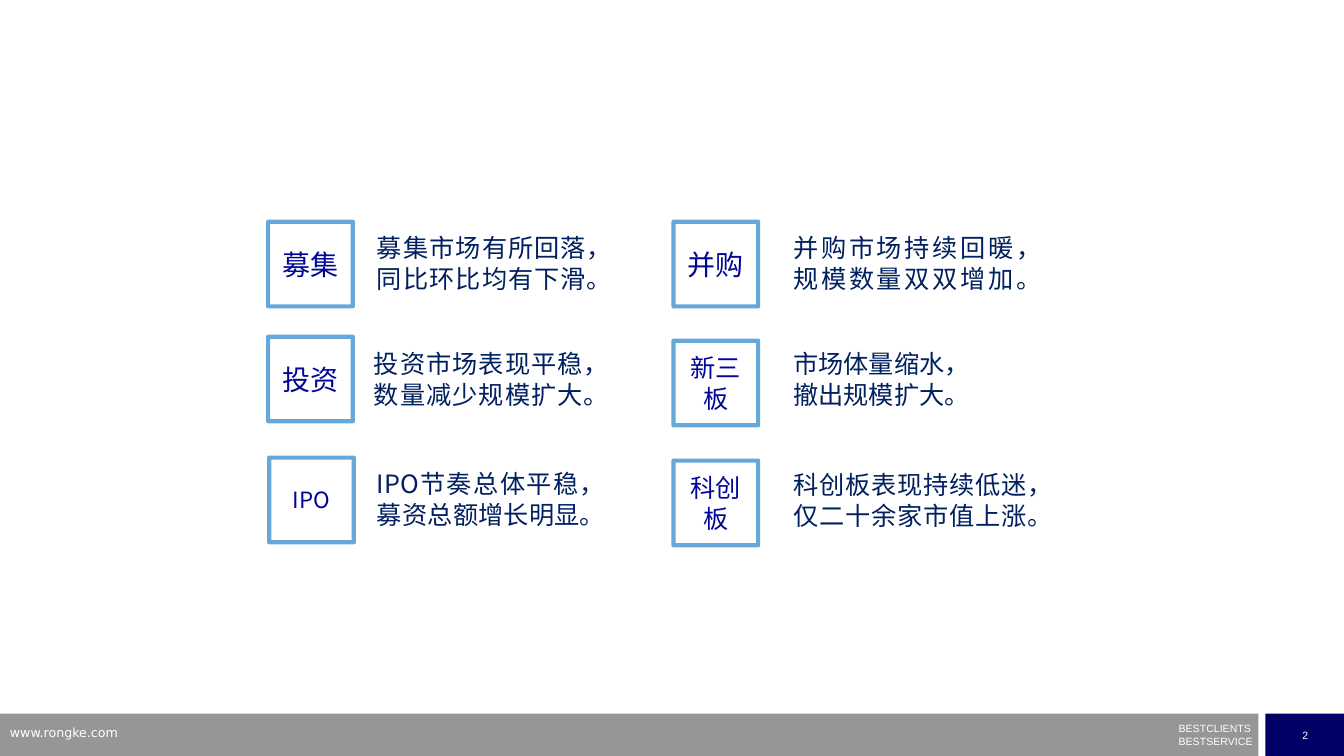
from lxml import etree
from pptx import Presentation
from pptx.dml.color import RGBColor
from pptx.enum.shapes import MSO_SHAPE as SHAPE
from pptx.enum.text import MSO_ANCHOR as ANCHOR, MSO_AUTO_SIZE as AUTO, PP_ALIGN as ALIGN
from pptx.oxml.ns import qn
from pptx.util import Inches, Pt

WHITE = RGBColor(0xFF, 0xFF, 0xFF)
GREY = RGBColor(0x96, 0x96, 0x96)
DARK_BLUE = RGBColor(0x00, 0x00, 0x66)
LABEL_BLUE = RGBColor(0x00, 0x07, 0x98)
TEXT_BLUE = RGBColor(0x00, 0x20, 0x60)
FRAME_BLUE = RGBColor(0x00, 0x70, 0xC0)
CJK = "Noto Sans CJK SC"
LABEL_SIDE = 0.84
NOTE_HEIGHT = 0.71

# label, label size, label left and top, note left, top and width, note paragraphs
TOPICS = [
    ("募集", 20, 2.66, 2.2, 3.64, 2.26, 2.28, ["募集市场有所回落，同比环比均有下滑。"]),
    ("投资", 20, 2.66, 3.34, 3.61, 3.41, 2.28, ["投资市场表现平稳，数量减少规模扩大。"]),
    ("IPO", 16, 2.67, 4.54, 3.64, 4.6, 2.21, ["IPO节奏总体平稳，", "募资总额增长明显。"]),
    ("并购", 20, 6.68, 2.2, 7.77, 2.26, 2.41, ["并购市场持续回暖，", "规模数量双双增加。"]),
    ("新三板", 18, 6.68, 3.38, 7.77, 3.41, 2.53, ["市场体量缩水，", "撤出规模扩大。"]),
    ("科创板", 18, 6.68, 4.57, 7.77, 4.61, 2.52, ["科创板表现持续低迷，", "仅二十余家市值上涨。"]),
]


def write(tf, lines, size, color, font, align=ALIGN.LEFT):
    """Fill a text frame with one paragraph per line."""
    for i, line in enumerate(lines):
        p = tf.add_paragraph() if i else tf.paragraphs[0]
        p.alignment = align
        r = p.add_run()
        r.text = line
        r.font.size = Pt(size)
        r.font.name = font
        r.font.color.rgb = color
        ea = etree.SubElement(r.font._element, qn("a:ea"))
        ea.set("typeface", font)


def add_rect(s, left, top, width, height, fill=None):
    sp = s.shapes.add_shape(SHAPE.RECTANGLE, Inches(left), Inches(top),
                            Inches(width), Inches(height))
    sp.shadow.inherit = False
    if fill is None:
        sp.fill.background()
    else:
        sp.fill.solid()
        sp.fill.fore_color.rgb = fill
        sp.line.fill.background()
    return sp


def add_text(s, left, top, width, height):
    sp = s.shapes.add_textbox(Inches(left), Inches(top), Inches(width), Inches(height))
    tf = sp.text_frame
    tf.word_wrap = True
    tf.auto_size = AUTO.SHAPE_TO_FIT_TEXT
    return tf


def add_label(s, left, top, text, size):
    sp = add_rect(s, left, top, LABEL_SIDE, LABEL_SIDE)
    sp.line.width = Pt(3)
    sp.line.color.rgb = FRAME_BLUE
    color = sp.line._ln.find(qn("a:solidFill")).find(qn("a:srgbClr"))
    etree.SubElement(color, qn("a:alpha")).set("val", "60000")
    sp.text_frame.vertical_anchor = ANCHOR.MIDDLE
    write(sp.text_frame, [text], size, LABEL_BLUE, CJK, ALIGN.CENTER)


def add_footer(s):
    add_rect(s, 0, 7.08, 12.48, 0.42, GREY)
    number = add_rect(s, 12.55, 7.08, 0.79, 0.42, DARK_BLUE).text_frame
    number.word_wrap = False
    number.vertical_anchor = ANCHOR.MIDDLE
    write(number, ["2"], 7.5, WHITE, "Arial", ALIGN.CENTER)

    motto = add_text(s, 11.69, 7.22, 0.76, 0.2)
    motto.margin_left = motto.margin_right = motto.margin_top = motto.margin_bottom = 0
    write(motto, ["BESTCLIENTS", "BESTSERVICE"], 7.5, WHITE, "Arial")
    for p in motto.paragraphs:
        p.line_spacing = 0.5
    motto.paragraphs[1].space_before = Pt(4.3)

    write(add_text(s, 0, 7.14, 3.2, 0.26), ["www.rongke.com"], 9, WHITE, "DejaVu Sans")


def main():
    prs = Presentation()
    prs.slide_width = Inches(13.33)
    prs.slide_height = Inches(7.5)
    s = prs.slides.add_slide(prs.slide_layouts[6])
    add_footer(s)
    for label, size, left, top, note_left, note_top, note_width, lines in TOPICS:
        add_label(s, left, top, label, size)
        note = add_text(s, note_left, note_top, note_width, NOTE_HEIGHT)
        write(note, lines, 18, TEXT_BLUE, CJK, ALIGN.JUSTIFY)
    prs.save("out.pptx")


if __name__ == "__main__":
    main()
